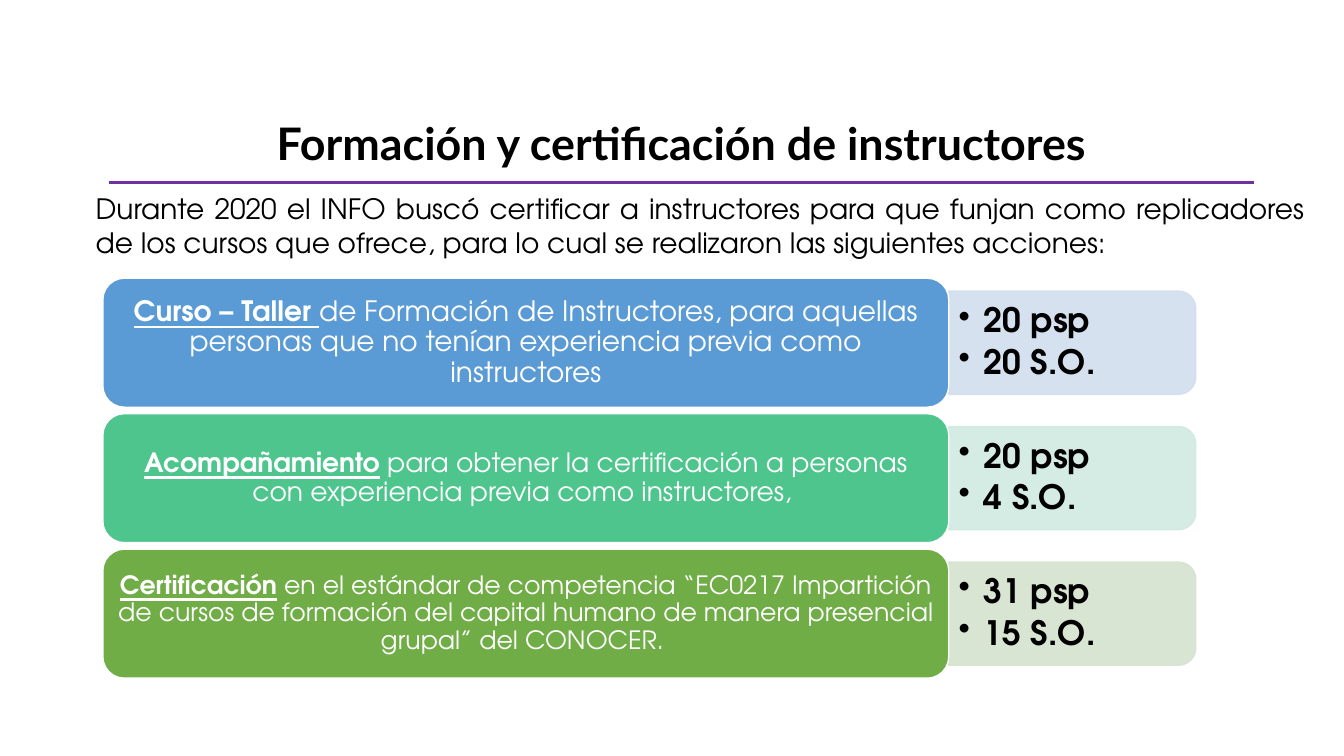
from lxml.etree import SubElement
from pptx import Presentation
from pptx.dml.color import RGBColor
from pptx.enum.shapes import MSO_CONNECTOR, MSO_SHAPE
from pptx.enum.text import MSO_ANCHOR as ANCHOR, PP_ALIGN as ALIGN
from pptx.oxml.ns import qn
from pptx.util import Inches, Pt

TITLE = "Formación y certificación de instructores"
INTRO = ("Durante 2020 el INFO buscó certificar a instructores para que funjan como "
         "replicadores de los cursos que ofrece, para lo cual se realizaron las "
         "siguientes acciones:")
# lead words, description, text size, card colour, panel colour, results
ACTIONS = [
    ("Curso – Taller ", "de Formación de Instructores, para aquellas personas que no "
     "tenían experiencia previa como instructores",
     20, "5B9BD5", "D2DEEF", ["20 psp", "20 S.O."]),
    ("Acompañamiento", " para obtener la certificación a personas con experiencia "
     "previa como instructores, ",
     19, "4DC58D", "D0EAE1", ["20 psp", "4 S.O."]),
    ("Certificación", " en el estándar de competencia “EC0217 Impartición de cursos de "
     "formación del capital humano de manera presencial grupal” del CONOCER. ",
     18, "70AD47", "D5E3CF", ["31 psp", "15 S.O."]),
]
HEADING_FONT, BODY_FONT = "Lato", "TeX Gyre Adventor"
WIDTH, HEIGHT = 13.33, 7.5
CARD_X, CARD_Y, CARD_W, CARD_H = 1.02, 2.76, 8.39, 1.28
ROW_STEP = CARD_H * 1.05
PANEL_W, PANEL_H = 2.45, CARD_H * 0.8
PANEL_ALPHA = 90


def color(hex_string):
    return RGBColor.from_string(hex_string)


def write(tf, paragraphs, size, font=BODY_FONT, fill="000000", bold=False,
          align=ALIGN.LEFT, anchor=ANCHOR.TOP, spacing=1.0, after=0,
          bullet=False, inset=(0.1, 0.05)):
    """Fill a text frame; each paragraph is a list of (text, emphasised) runs."""
    tf.word_wrap = True
    tf.vertical_anchor = anchor
    tf.margin_left = tf.margin_right = Inches(inset[0])
    tf.margin_top = tf.margin_bottom = Inches(inset[1])
    for i, runs in enumerate(paragraphs):
        p = tf.paragraphs[0] if i == 0 else tf.add_paragraph()
        if bullet:
            pPr = p._p.get_or_add_pPr()
            pPr.set("marL", str(Inches(0.25)))
            pPr.set("indent", str(-Inches(0.25)))
            SubElement(pPr, qn("a:buChar")).set("char", "•")
        p.alignment, p.line_spacing = align, spacing
        p.space_before, p.space_after = Pt(0), Pt(after)
        for text, emphasised in runs:
            r = p.add_run()
            r.text = text
            r.font.name, r.font.size = font, Pt(size)
            r.font.bold = bold or emphasised
            r.font.underline = emphasised
            r.font.color.rgb = color(fill)


def add_text(s, box, paragraphs, size, **fmt):
    tb = s.shapes.add_textbox(*map(Inches, box))
    write(tb.text_frame, paragraphs, size, **fmt)


def add_block(s, preset, box, fill, line, alpha=None):
    sp = s.shapes.add_shape(preset, *map(Inches, box))
    sp.shadow.inherit = False
    sp.fill.solid()
    sp.fill.fore_color.rgb = color(fill)
    sp.line.color.rgb = color(line)
    sp.line.width = Pt(1)
    if alpha:
        for clr in sp._element.spPr.iter(qn("a:srgbClr")):
            SubElement(clr, qn("a:alpha")).set("val", str(alpha * 1000))
    return sp


def add_action(s, row, lead, description, size, card_fill, panel_fill, results):
    y = CARD_Y + row * ROW_STEP
    middle = y + CARD_H / 2
    panel_x = CARD_X + CARD_W
    # The panel lies on its side, so its box is given before the quarter turn
    panel_box = (panel_x + (PANEL_W - PANEL_H) / 2, middle - PANEL_W / 2,
                 PANEL_H, PANEL_W)
    panel = add_block(s, MSO_SHAPE.ROUND_2_SAME_RECTANGLE, panel_box,
                      panel_fill, panel_fill, PANEL_ALPHA)
    panel.rotation = 90
    add_text(s, (panel_x, middle - 0.46, PANEL_W - 0.05, 0.92),
             [[(result, False)] for result in results], 24, bold=True,
             anchor=ANCHOR.MIDDLE, spacing=0.9, after=3.6, bullet=True)
    card = add_block(s, MSO_SHAPE.ROUNDED_RECTANGLE, (CARD_X, y, CARD_W, CARD_H),
                     card_fill, "FFFFFF")
    write(card.text_frame, [[(lead, True), (description, False)]], size,
          fill="FFFFFF", align=ALIGN.CENTER, anchor=ANCHOR.MIDDLE, spacing=0.9,
          inset=(size * 0.004, 0.04))


def main():
    prs = Presentation()
    prs.slide_width, prs.slide_height = Inches(WIDTH), Inches(HEIGHT)
    s = prs.slides.add_slide(prs.slide_layouts[6])

    add_text(s, (0.76, 1.16, 12, 0.63), [[(TITLE, False)]], 32, font=HEADING_FONT,
             bold=True, align=ALIGN.CENTER, spacing=0.9)
    rule = s.shapes.add_connector(MSO_CONNECTOR.STRAIGHT,
                                  *map(Inches, (1.08, 1.81, 12.44, 1.81)))
    rule.line.color.rgb = color("7030A0")
    rule.line.width = Pt(2.25)
    SubElement(rule._element.spPr, qn("a:effectLst"))
    add_text(s, (0.85, 1.85, 12.19, 0.86), [[(INTRO, False)]], 20,
             align=ALIGN.JUSTIFY)

    for row, action in enumerate(ACTIONS):
        add_action(s, row, *action)
    prs.save("out.pptx")


if __name__ == "__main__":
    main()
